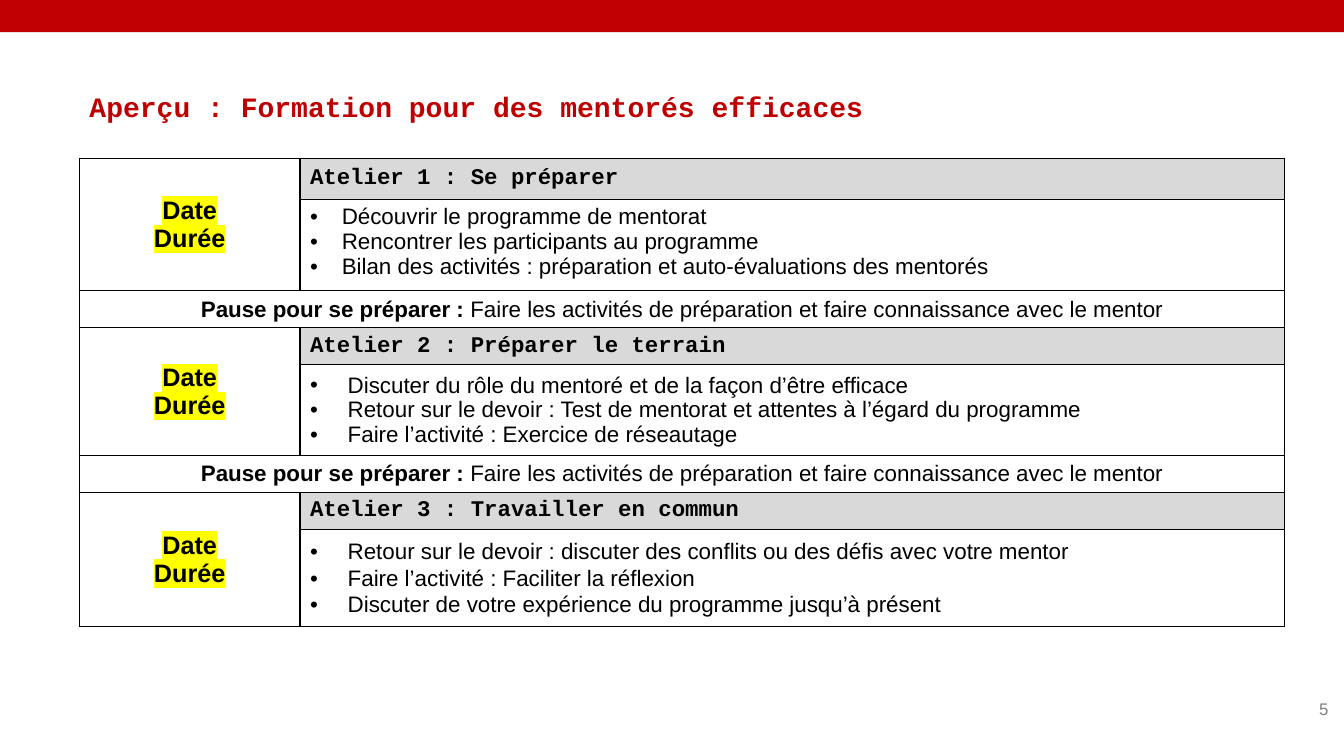
from dataclasses import dataclass

from lxml.etree import SubElement as Sub
from pptx import Presentation
from pptx.dml.color import RGBColor as Rgb
from pptx.enum.shapes import MSO_SHAPE as Shape
from pptx.enum.text import MSO_ANCHOR as Anchor, MSO_AUTO_SIZE as Fit, PP_ALIGN as Align
from pptx.oxml.ns import qn
from pptx.util import Cm, Pt


@dataclass(frozen=True)
class Theme:
    red: str = "C00000"
    black: str = "000000"
    gray: str = "808080"
    band: str = "D9D9D9"
    mark: str = "FFFF00"
    sans: str = "Arial"
    mono: str = "Courier New"
    title: int = 20
    date: int = 18
    body: int = 16
    page: int = 12


@dataclass(frozen=True)
class Session:
    head: str
    items: tuple[str, ...]
    heights: tuple[float, float]
    indent: float = 0.95
    space: float = 1.0
    anchor: Anchor = Anchor.MIDDLE


THEME = Theme()
BREAK = (("Pause pour se préparer : ", True),
         ("Faire les activités de préparation et faire connaissance avec le mentor", False))
BREAK_H = 0.93
SESSIONS = (
    Session("Atelier 1 : Se préparer",
            ("Découvrir le programme de mentorat",
             "Rencontrer les participants au programme",
             "Bilan des activités : préparation et auto-évaluations des mentorés"),
            (1.03, 2.31), indent=0.8, anchor=Anchor.TOP),
    Session("Atelier 2 : Préparer le terrain",
            ("Discuter du rôle du mentoré et de la façon d’être efficace",
             "Retour sur le devoir : Test de mentorat et attentes à l’égard du programme",
             "Faire l’activité : Exercice de réseautage"),
            (0.93, 2.29)),
    Session("Atelier 3 : Travailler en commun",
            ("Retour sur le devoir : discuter des conflits ou des défis avec votre mentor",
             "Faire l’activité : Faciliter la réflexion",
             "Discuter de votre expérience du programme jusqu’à présent"),
            (0.93, 2.44), space=1.07),
)


def write(frame, *paras, size: int = THEME.body, font: str = THEME.sans,
          color: str = THEME.black, bold: bool = False, align: Align = Align.LEFT,
          mark: str = "", indent: float = 0, space: float = 1.0) -> None:
    """Fill a frame; a paragraph is a string or a tuple of (text, bold) runs."""
    for i, para in enumerate(paras):
        p = frame.paragraphs[0] if i == 0 else frame.add_paragraph()
        p.alignment, p.line_spacing = align, space
        if indent:
            props = p._p.get_or_add_pPr()
            props.set("marL", str(Cm(indent)))
            props.set("indent", str(-Cm(indent)))
            Sub(props, qn("a:buFont"), typeface=THEME.sans)
            Sub(props, qn("a:buChar"), char="•")
        for text, strong in ((para, bold),) if isinstance(para, str) else para:
            run = p.add_run()
            run.text = text
            f = run.font
            f.size, f.name, f.bold = Pt(size), font, strong
            f.color.rgb = Rgb.from_string(color)
            if mark:
                tag = Sub(run._r.rPr, qn("a:highlight"))
                Sub(tag, qn("a:srgbClr"), val=mark)
                run._r.rPr.find(qn("a:solidFill")).addnext(tag)


def frame_cell(cell) -> None:
    """Give a cell thin black borders and no fill."""
    props = cell._tc.get_or_add_tcPr()
    for side in ("L", "R", "T", "B"):
        line = Sub(props, qn(f"a:ln{side}"), w=str(Pt(1)))
        Sub(Sub(line, qn("a:solidFill")), qn("a:srgbClr"), val=THEME.black)
    cell.fill.background()


def add_session(table, row: int, item: Session) -> None:
    date, head, body = table.cell(row, 0), table.cell(row, 1), table.cell(row + 1, 1)
    date.merge(table.cell(row + 1, 0))
    date.vertical_anchor = head.vertical_anchor = Anchor.MIDDLE
    body.vertical_anchor = item.anchor
    head.fill.solid()
    head.fill.fore_color.rgb = Rgb.from_string(THEME.band)
    write(date.text_frame, "Date", "Durée", size=THEME.date, bold=True,
          align=Align.CENTER, mark=THEME.mark)
    write(head.text_frame, item.head, font=THEME.mono, bold=True)
    write(body.text_frame, *item.items, indent=item.indent, space=item.space)
    for i, height in enumerate(item.heights):
        table.rows[row + i].height = Cm(height)


def add_break(table, row: int) -> None:
    cell = table.cell(row, 0)
    cell.merge(table.cell(row, 1))
    cell.vertical_anchor = Anchor.MIDDLE
    write(cell.text_frame, BREAK, align=Align.CENTER)
    table.rows[row].height = Cm(BREAK_H)


def add_plan(slide) -> None:
    count = 3 * len(SESSIONS) - 1
    high = sum(sum(s.heights) for s in SESSIONS) + BREAK_H * (len(SESSIONS) - 1)
    table = slide.shapes.add_table(count, 2, Cm(2), Cm(3.99), Cm(30.38), Cm(high)).table
    table.first_row = table.horz_banding = False
    for col, width in zip(table.columns, (5.56, 24.82)):
        col.width = Cm(width)
    for cell in table.iter_cells():
        frame_cell(cell)
    for i, item in enumerate(SESSIONS):
        if i:
            add_break(table, 3 * i - 1)
        add_session(table, 3 * i, item)


def main() -> None:
    deck = Presentation()
    deck.slide_width, deck.slide_height = Cm(33.87), Cm(19.05)
    slide = deck.slides.add_slide(deck.slide_layouts[5])

    # Top bar
    bar = slide.shapes.add_shape(Shape.RECTANGLE, 0, 0, deck.slide_width, Cm(0.81))
    bar.shadow.inherit = False
    bar.fill.solid()
    bar.fill.fore_color.rgb = Rgb.from_string(THEME.red)
    bar.line.fill.background()

    # Title
    title = slide.shapes.title
    title.left, title.top, title.width, title.height = Cm(2), Cm(2), Cm(27.3), Cm(1.12)
    frame = title.text_frame
    frame.auto_size, frame.vertical_anchor = Fit.NONE, Anchor.TOP
    frame.margin_top, frame.margin_bottom = Cm(0.25), 0
    write(frame, "Aperçu : Formation pour des mentorés efficaces",
          size=THEME.title, font=THEME.mono, color=THEME.red, bold=True)

    # Workshop table
    add_plan(slide)

    # Page number
    page = slide.shapes.add_textbox(Cm(26.11), Cm(17.35), Cm(7.62), Cm(1.02)).text_frame
    page.word_wrap, page.vertical_anchor = True, Anchor.MIDDLE
    write(page, "5", size=THEME.page, color=THEME.gray, align=Align.RIGHT)

    deck.save("out.pptx")


if __name__ == "__main__":
    main()
